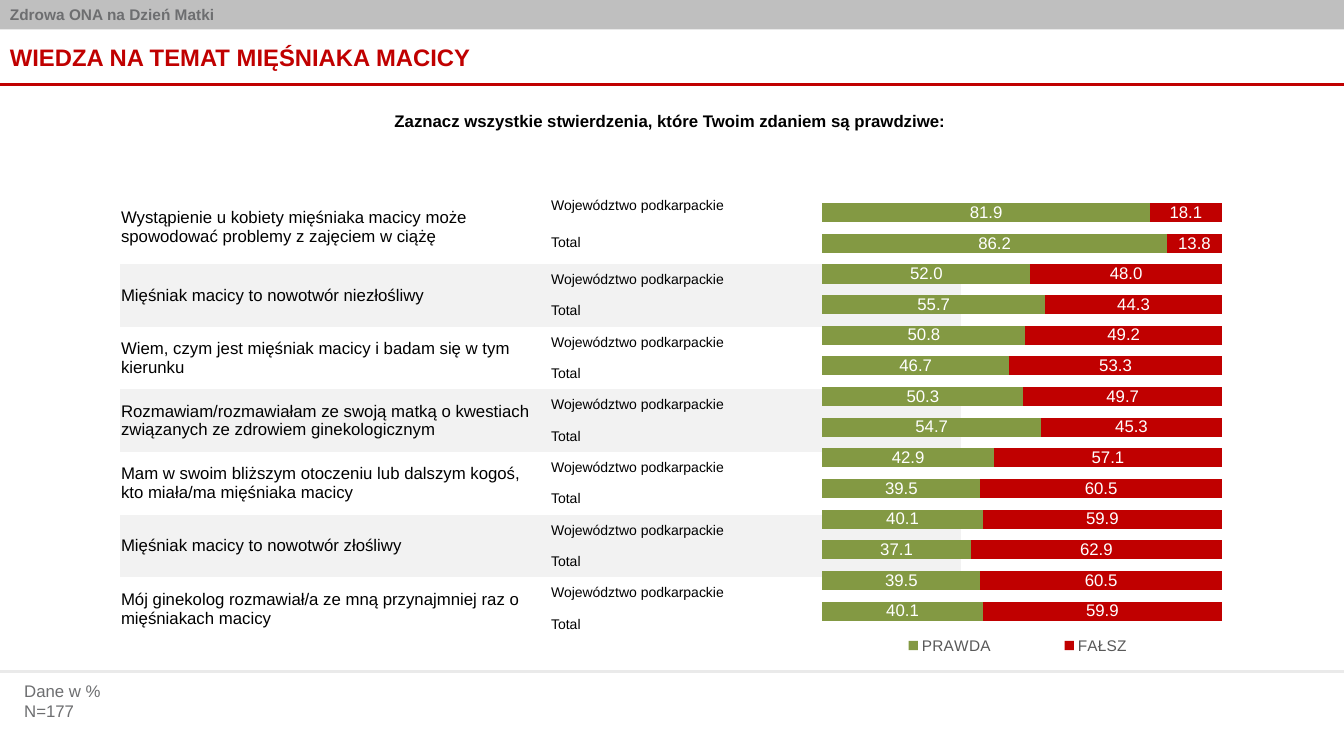
from lxml.etree import SubElement
from pptx import Presentation
from pptx.chart.data import CategoryChartData
from pptx.dml.color import RGBColor
from pptx.enum.chart import XL_CHART_TYPE as ChartType
from pptx.enum.chart import XL_LABEL_POSITION as LabelPos
from pptx.enum.chart import XL_LEGEND_POSITION as LegendPos
from pptx.enum.shapes import MSO_CONNECTOR as Connector
from pptx.enum.shapes import MSO_SHAPE as Shape
from pptx.enum.text import MSO_ANCHOR as Anchor
from pptx.enum.text import PP_ALIGN as Align
from pptx.oxml import parse_xml
from pptx.oxml.ns import nsdecls, qn
from pptx.util import Cm, Pt

COLORS = {
    "band": "808080", "grey_text": "6D6E70", "red": "C00000", "rule": "EAEAEA",
    "black": "000000", "stripe": "F2F2F2", "green": "839943", "white": "FFFFFF",
    "legend": "595959",
}
FONT = "Arial"
NO_TABLE_STYLE = "{2D5ABB26-0587-4C30-8999-92F81FD0307C}"
WIDTH, HEIGHT = 33.87, 19.05

STATEMENTS = [
    "Wystąpienie u kobiety mięśniaka macicy może spowodować problemy z zajęciem w ciążę",
    "Mięśniak macicy to nowotwór niezłośliwy",
    "Wiem, czym jest mięśniak macicy i badam się w tym kierunku",
    "Rozmawiam/rozmawiałam ze swoją matką o kwestiach związanych ze zdrowiem ginekologicznym",
    "Mam w swoim bliższym otoczeniu lub dalszym kogoś, kto miała/ma mięśniaka macicy",
    "Mięśniak macicy to nowotwór złośliwy",
    "Mój ginekolog rozmawiał/a ze mną przynajmniej raz o mięśniakach macicy",
]
GROUPS = ["Województwo podkarpackie", "Total"]
ANSWERS = [
    ("PRAWDA", "green", [81.9, 86.2, 52.0, 55.7, 50.8, 46.7, 50.3,
                         54.7, 42.9, 39.5, 40.1, 37.1, 39.5, 40.1]),
    ("FAŁSZ", "red", [18.1, 13.8, 48.0, 44.3, 49.2, 53.3, 49.7,
                      45.3, 57.1, 60.5, 59.9, 62.9, 60.5, 59.9]),
]


def rgb(name):
    return RGBColor.from_string(COLORS[name])


def style_font(font, size, color, bold=False):
    font.name, font.size, font.bold = FONT, Pt(size), bold
    font.color.rgb = rgb(color)


def write(frame, lines, size, color, bold=False, align=Align.LEFT):
    for index, line in enumerate(lines):
        paragraph = frame.add_paragraph() if index else frame.paragraphs[0]
        paragraph.alignment = align
        run = paragraph.add_run()
        run.text = line
        style_font(run.font, size, color, bold)


def add_text(slide, box, lines, size, color, bold=False, align=Align.LEFT, anchor=Anchor.TOP):
    frame = slide.shapes.add_textbox(*map(Cm, box)).text_frame
    frame.word_wrap = True
    frame.vertical_anchor = anchor
    write(frame, lines, size, color, bold, align)


def add_header_band(slide, text):
    band = slide.shapes.add_shape(Shape.RECTANGLE, 0, 0, Cm(WIDTH), Cm(0.74))
    band.shadow.inherit = False
    band.line.fill.background()
    band.fill.solid()
    band.fill.fore_color.rgb = rgb("band")
    # Half transparent fill
    tint = next(band.fill._xPr.iter(qn("a:srgbClr")))
    SubElement(tint, qn("a:alpha")).set("val", "50000")
    band.text_frame.vertical_anchor = Anchor.MIDDLE
    write(band.text_frame, [text], 11, "grey_text", bold=True)


def add_rule(slide, y, color):
    rule = slide.shapes.add_connector(Connector.STRAIGHT, 0, Cm(y), Cm(WIDTH), Cm(y))
    rule.line.color.rgb = rgb(color)
    rule.line.width = Pt(2)
    SubElement(rule._element.spPr, qn("a:effectLst"))


def set_margins(cell, left, top, right, bottom):
    cell.margin_left, cell.margin_top = Cm(left), Cm(top)
    cell.margin_right, cell.margin_bottom = Cm(right), Cm(bottom)


def add_statement_table(slide):
    row_count = len(STATEMENTS) * len(GROUPS)
    holder = slide.shapes.add_table(row_count, 2, Cm(3.02), Cm(4.8), Cm(21.21), Cm(11))
    table = holder.table
    table.first_row = table.horz_banding = False
    for style in holder._element.iter(qn("a:tableStyleId")):
        style.text = NO_TABLE_STYLE
    for column, width in zip(table.columns, (10.62, 10.59)):
        column.width = Cm(width)
    for index, row in enumerate(table.rows):
        row.height = Cm(1.06 if index == 1 else 0.79)

    for number, statement in enumerate(STATEMENTS):
        top = number * len(GROUPS)
        for offset, group in enumerate(GROUPS):
            claim, label = table.cell(top + offset, 0), table.cell(top + offset, 1)
            set_margins(claim, 0.03, 0, 0.03, 0)
            set_margins(label, 0.25, 0.13, 0.25, 0.13)
            write(label.text_frame, [group], 10, "black")
            for cell in (claim, label):
                cell.vertical_anchor = Anchor.MIDDLE
                if number % 2:
                    cell.fill.solid()
                    cell.fill.fore_color.rgb = rgb("stripe")
                else:
                    cell.fill.background()
        merged = table.cell(top, 0)
        merged.merge(table.cell(top + len(GROUPS) - 1, 0))
        write(merged.text_frame, [statement], 12, "black")


def manual_layout(x, y, w, h, inner=False):
    target = '<c:layoutTarget val="inner"/>' if inner else ""
    sizes = "".join(f'<c:{key} val="{value}"/>' for key, value in zip("xywh", (x, y, w, h)))
    return parse_xml(
        f'<c:layout {nsdecls("c")}><c:manualLayout>{target}'
        '<c:xMode val="edge"/><c:yMode val="edge"/>'
        f"{sizes}</c:manualLayout></c:layout>")


def place(element, layout, after=None):
    for old in element.findall(qn("c:layout")):
        element.remove(old)
    if after is None:
        element.insert(0, layout)
    else:
        element.find(qn(after)).addnext(layout)


def add_answer_chart(slide):
    data = CategoryChartData(number_format="0.0")
    data.categories = [str(n + 1) for n in range(len(ANSWERS[0][2]))]
    for name, _, values in ANSWERS:
        data.add_series(name, values)
    chart = slide.shapes.add_chart(
        ChartType.BAR_STACKED_100, Cm(9.09), Cm(3.33), Cm(22.38), Cm(13.69), data).chart
    chart.has_title = False
    style_font(chart.font, 12, "black")

    # Hidden axes, first category on top
    chart.category_axis.reverse_order = True
    chart.value_axis.has_major_gridlines = False
    chart.category_axis.visible = chart.value_axis.visible = False

    # Bars and their values
    plot = chart.plots[0]
    plot.gap_width, plot.overlap = 60, 100
    plot.vary_by_categories = False
    for series, (_, color, _) in zip(plot.series, ANSWERS):
        series.format.fill.solid()
        series.format.fill.fore_color.rgb = rgb(color)
        labels = series.data_labels
        labels.show_value = True
        labels.position = LabelPos.CENTER
        labels.number_format, labels.number_format_is_linked = "0.0", False
        style_font(labels.font, 12, "white")

    # Legend and placement
    chart.has_legend = True
    legend = chart.legend
    legend.position = LegendPos.BOTTOM
    legend.include_in_layout = False
    style_font(legend.font, 11, "legend")
    place(legend._element, manual_layout(0.54, 0.92, 0.4, 0.05), "c:legendPos")
    plot_area = next(chart._chartSpace.iter(qn("c:plotArea")))
    place(plot_area, manual_layout(0.52, 0.12, 0.45, 0.79, inner=True))


def main():
    deck = Presentation()
    deck.slide_width, deck.slide_height = Cm(WIDTH), Cm(HEIGHT)
    slide = deck.slides.add_slide(deck.slide_layouts[6])

    # Header and rules
    add_header_band(slide, "Zdrowa ONA na Dzień Matki")
    add_rule(slide, 16.92, "rule")
    add_rule(slide, 2.13, "red")
    add_text(slide, (0, 0.74, WIDTH, 1.4), ["WIEDZA NA TEMAT MIĘŚNIAKA MACICY"],
             17, "red", bold=True, anchor=Anchor.MIDDLE)

    # Question and results
    add_text(slide, (4.85, 2.67, 24.08, 0.76),
             ["Zaznacz wszystkie stwierdzenia, które Twoim zdaniem są prawdziwe:"],
             12, "black", bold=True, align=Align.CENTER)
    add_statement_table(slide)
    add_answer_chart(slide)

    # Footnote
    add_text(slide, (0.36, 17.02, 24.54, 1.27), ["Dane w %", "N=177"], 12, "grey_text")
    deck.save("out.pptx")


if __name__ == "__main__":
    main()
